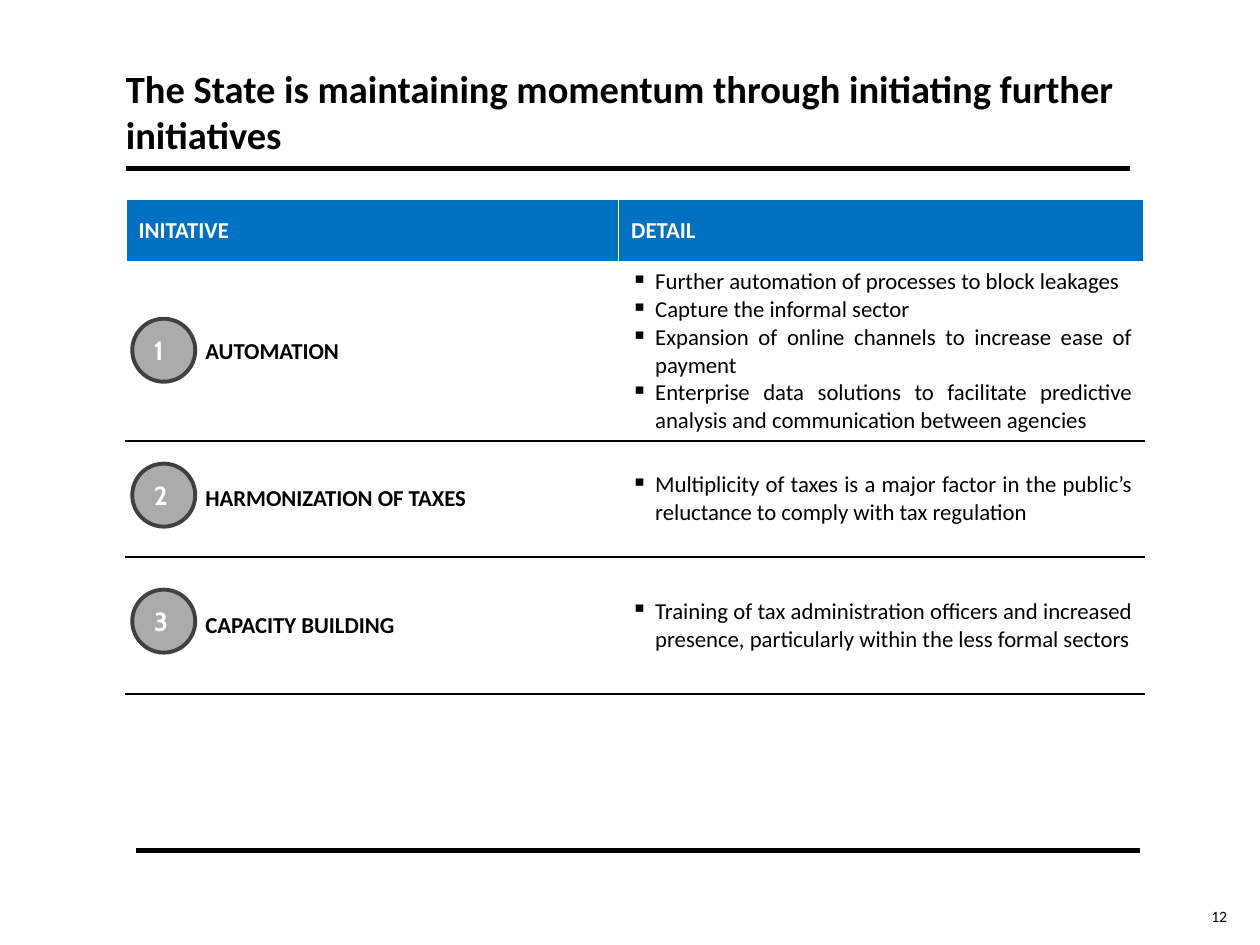
from lxml.etree import SubElement
from pptx import Presentation
from pptx.dml.color import RGBColor
from pptx.enum.shapes import MSO_CONNECTOR, MSO_SHAPE
from pptx.enum.text import MSO_ANCHOR, PP_ALIGN
from pptx.oxml.ns import qn
from pptx.util import Inches, Pt

BLACK = RGBColor(0x00, 0x00, 0x00)
WHITE = RGBColor(0xFF, 0xFF, 0xFF)
BLUE = RGBColor(0x00, 0x70, 0xC0)
GREY = RGBColor(0x59, 0x59, 0x59)
DARK_GREY = RGBColor(0x40, 0x40, 0x40)

TITLE = "The State is maintaining momentum through initiating further initiatives"
PAGE_NUMBER = "12"
HEADERS = ("INITATIVE", "DETAIL")
INITIATIVES = [
    ("AUTOMATION", [
        "Further automation of processes to block leakages",
        "Capture the informal sector",
        "Expansion of online channels to increase ease of payment",
        "Enterprise data solutions to facilitate predictive analysis and communication between agencies",
    ]),
    ("HARMONIZATION OF TAXES", [
        "Multiplicity of taxes is a major factor in the public’s reluctance to comply with tax regulation",
    ]),
    ("CAPACITY BUILDING", [
        "Training of tax administration officers and increased presence, "
        "particularly within the less formal sectors",
    ]),
]
COL_WIDTHS = (0.53, 3.38, 4.17)
ROW_HEIGHTS = (0.5, 1.42, 0.92, 1.09, 1)
BADGE_TOPS = (2.53, 3.68, 4.68)
RULES = ((1, 8.97, 1.34), (1.08, 9.05, 6.75))


def style(p, size, color, bold=False, font="Calibri", align=PP_ALIGN.LEFT):
    p.alignment = align
    for r in p.runs:
        r.font.size = Pt(size)
        r.font.name = font
        r.font.bold = bold
        r.font.color.rgb = color


def add_rule(slide, x1, x2, y):
    line = slide.shapes.add_connector(
        MSO_CONNECTOR.STRAIGHT, Inches(x1), Inches(y), Inches(x2), Inches(y))
    line.line.color.rgb = BLACK
    line.line.width = Pt(3)
    SubElement(line._element.spPr, qn("a:effectLst"))


def add_text(slide, text, box, size, wrap, bold=False, align=PP_ALIGN.LEFT):
    tf = slide.shapes.add_textbox(*map(Inches, box)).text_frame
    tf.margin_left = tf.margin_right = tf.margin_top = tf.margin_bottom = 0
    tf.word_wrap = wrap
    tf.vertical_anchor = MSO_ANCHOR.BOTTOM
    tf.text = text
    style(tf.paragraphs[0], size, BLACK, bold, align=align)


def add_border(cell, side, color):
    ln = SubElement(cell._tc.get_or_add_tcPr(), qn(f"a:ln{side}"), w=str(Pt(1)))
    fill = SubElement(ln, qn("a:solidFill"))
    SubElement(fill, qn("a:srgbClr"), val=str(color))


def add_bullet(p):
    pPr = p._p.get_or_add_pPr()
    pPr.set("marL", str(Inches(0.19)))
    pPr.set("indent", str(-Inches(0.19)))
    SubElement(pPr, qn("a:buChar"), char="▪")


def fill_cell(cell, lines, color=BLACK, bold=False, bullets=False):
    cell.text = "\n".join(lines)
    for p in cell.text_frame.paragraphs:
        if bullets:
            add_bullet(p)
        style(p, 13, color, bold, align=PP_ALIGN.JUSTIFY)


def add_initiatives(slide):
    table = slide.shapes.add_table(
        len(ROW_HEIGHTS), len(COL_WIDTHS), Inches(1), Inches(1.58),
        Inches(sum(COL_WIDTHS)), Inches(sum(ROW_HEIGHTS))).table
    table.first_row = table.horz_banding = False
    for col, width in zip(table.columns, COL_WIDTHS):
        col.width = Inches(width)
    last = len(ROW_HEIGHTS) - 1
    for i, (row, height) in enumerate(zip(table.rows, ROW_HEIGHTS)):
        row.height = Inches(height)
        for cell in row.cells:
            cell.vertical_anchor = MSO_ANCHOR.MIDDLE
            if i == 0:
                cell.fill.solid()
                cell.fill.fore_color.rgb = BLUE
                continue
            add_border(cell, "L", WHITE)
            add_border(cell, "R", WHITE)
            if i > 1:
                add_border(cell, "T", BLACK)
            if i < last:
                add_border(cell, "B", BLACK)
            cell.fill.background()
    table.cell(0, 0).merge(table.cell(0, 1))
    for c, header in zip((0, 2), HEADERS):
        fill_cell(table.cell(0, c), [header], WHITE, bold=True)
    for i, (name, details) in enumerate(INITIATIVES, 1):
        fill_cell(table.cell(i, 1), [name], bold=True)
        fill_cell(table.cell(i, 2), details, bullets=True)


def add_badge(slide, number, top):
    sp = slide.shapes.add_shape(
        MSO_SHAPE.OVAL, Inches(1.05), Inches(top), Inches(0.5), Inches(0.5))
    sp.shadow.inherit = False
    sp.fill.solid()
    sp.fill.fore_color.rgb = GREY
    color = sp._element.spPr.find(qn("a:solidFill")).find(qn("a:srgbClr"))
    SubElement(color, qn("a:alpha"), val="50000")
    sp.line.color.rgb = DARK_GREY
    sp.line.width = Pt(2.25)
    tf = sp.text_frame
    tf.vertical_anchor = MSO_ANCHOR.MIDDLE
    tf.text = str(number)
    style(tf.paragraphs[0], 15, WHITE, bold=True, font="Cabin")


def main():
    prs = Presentation()
    prs.slide_width, prs.slide_height = Inches(10), Inches(7.5)
    slide = prs.slides.add_slide(prs.slide_layouts[6])
    for rule in RULES:
        add_rule(slide, *rule)
    add_text(slide, PAGE_NUMBER, (9.59, 7.2, 0.15, 0.15), 9, False, align=PP_ALIGN.RIGHT)
    add_text(slide, TITLE, (1, 0.63, 7.97, 0.62), 22, True, bold=True)
    add_initiatives(slide)
    for number, top in enumerate(BADGE_TOPS, 1):
        add_badge(slide, number, top)
    prs.save("out.pptx")


if __name__ == "__main__":
    main()
